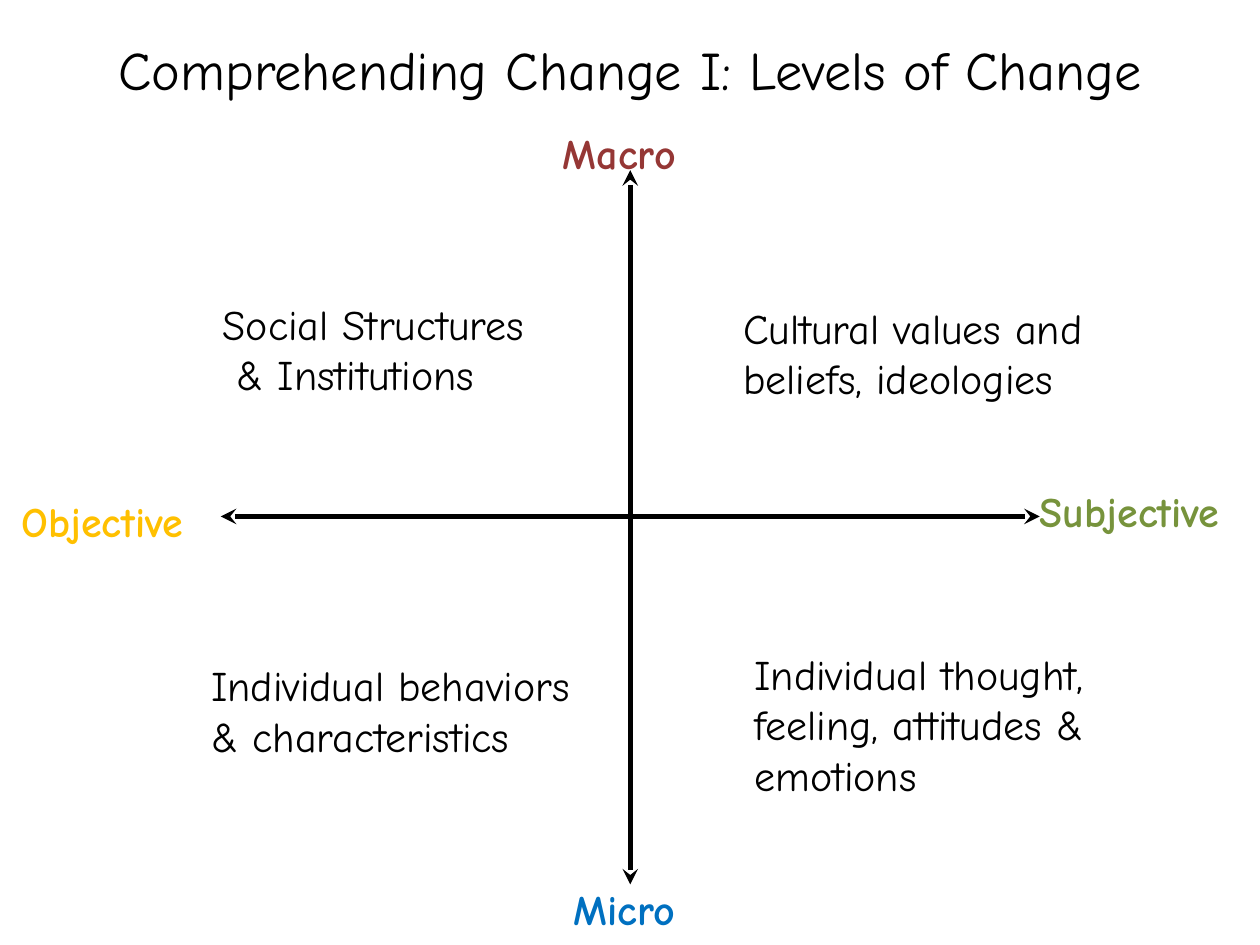
from dataclasses import dataclass

import pptx
from lxml import etree
from pptx.dml.color import RGBColor
from pptx.enum.shapes import MSO_CONNECTOR
from pptx.enum.text import MSO_ANCHOR, MSO_AUTO_SIZE, PP_ALIGN
from pptx.oxml.ns import qn
from pptx.util import Cm, Pt


@dataclass(frozen=True)
class Theme:
    font: str = "Comic Neue"
    title_size: int = 31
    body_size: int = 24
    axis_width: int = 3
    ink: str = "000000"
    macro: str = "953735"
    micro: str = "0070C0"
    objective: str = "FFC000"
    subjective: str = "77933C"


@dataclass(frozen=True)
class Box:
    """A region of the slide, in centimetres."""
    left: float
    top: float
    width: float
    height: float

    def inner(self, left, top, width, height):
        return Box(self.left + left, self.top + top, width, height)


THEME = Theme()


def add_text(slide, box, wording, size=THEME.body_size, color=THEME.ink, bold=False):
    """Place text; a vertical tab in the wording is a line break."""
    textbox = slide.shapes.add_textbox(
        Cm(box.left), Cm(box.top), Cm(box.width), Cm(box.height))
    frame = textbox.text_frame
    frame.text = wording
    frame.word_wrap = False
    frame.auto_size = MSO_AUTO_SIZE.SHAPE_TO_FIT_TEXT
    for paragraph in frame.paragraphs:
        for run in paragraph.runs:
            run.font.name = THEME.font
            run.font.size = Pt(size)
            run.font.bold = bold
            run.font.color.rgb = RGBColor.from_string(color)
    return frame


def add_title(slide, box):
    frame = add_text(slide, box, "Comprehending Change I: Levels of Change",
                     size=THEME.title_size)
    frame.auto_size = MSO_AUTO_SIZE.NONE
    frame.word_wrap = True
    frame.vertical_anchor = MSO_ANCHOR.MIDDLE
    frame.paragraphs[0].alignment = PP_ALIGN.CENTER


def add_axis(slide, x1, y1, x2, y2):
    """Draw a line with an arrowhead at both ends."""
    axis = slide.shapes.add_connector(
        MSO_CONNECTOR.STRAIGHT, Cm(x1), Cm(y1), Cm(x2), Cm(y2))
    axis.line.width = Pt(THEME.axis_width)
    axis.line.color.rgb = RGBColor.from_string(THEME.ink)
    properties = axis.element.spPr
    outline = properties.find(qn("a:ln"))
    for end in ("a:headEnd", "a:tailEnd"):
        etree.SubElement(outline, qn(end), type="stealth")
    etree.SubElement(properties, qn("a:effectLst"))


def add_axes(slide, box):
    center_x = box.left + box.width / 2
    center_y = box.top + 6.98
    add_axis(slide, center_x, box.top, center_x, box.top + box.height)
    add_axis(slide, box.left + box.width, center_y, box.left, center_y)


def add_axis_labels(slide, box):
    labels = [
        ("Subjective", THEME.subjective, box.width, 6.35, 4.6),
        ("Objective", THEME.objective, -4.02, 6.55, 4.24),
        ("Micro", THEME.micro, 7.11, 14.38, 2.54),
        ("Macro", THEME.macro, 6.9, -0.86, 2.79),
    ]
    for wording, color, left, top, width in labels:
        frame = add_text(slide, box.inner(left, top, width, 1.02), wording,
                         color=color, bold=True)
        frame.vertical_anchor = MSO_ANCHOR.MIDDLE
        frame.margin_left = frame.margin_right = 0
        frame.margin_top = frame.margin_bottom = 0


def add_quadrants(slide, box):
    quadrants = [
        ("Social Structures\n & Institutions", -0.21, 2.46, 7.59, 2.3),
        ("Individual behaviors\n& characteristics", -0.44, 9.75, 8.46, 2.3),
        ("Cultural values and\vbeliefs, ideologies", 10.28, 2.54, 7.87, 2.3),
        ("Individual thought,\vfeeling, attitudes &\nemotions", 10.51, 9.52, 8.46, 3.3),
    ]
    for wording, *place in quadrants:
        add_text(slide, box.inner(*place), wording)


def main():
    presentation = pptx.Presentation()
    presentation.slide_width, presentation.slide_height = Cm(25.4), Cm(19.05)
    slide = presentation.slides.add_slide(presentation.slide_layouts[6])

    levels = Box(4.45, 3.43, 16.51, 14.4)
    add_axes(slide, levels)
    add_axis_labels(slide, levels)
    add_quadrants(slide, levels)
    add_title(slide, Box(1.27, -0.2, 22.86, 3.18))

    presentation.save("out.pptx")


if __name__ == "__main__":
    main()
